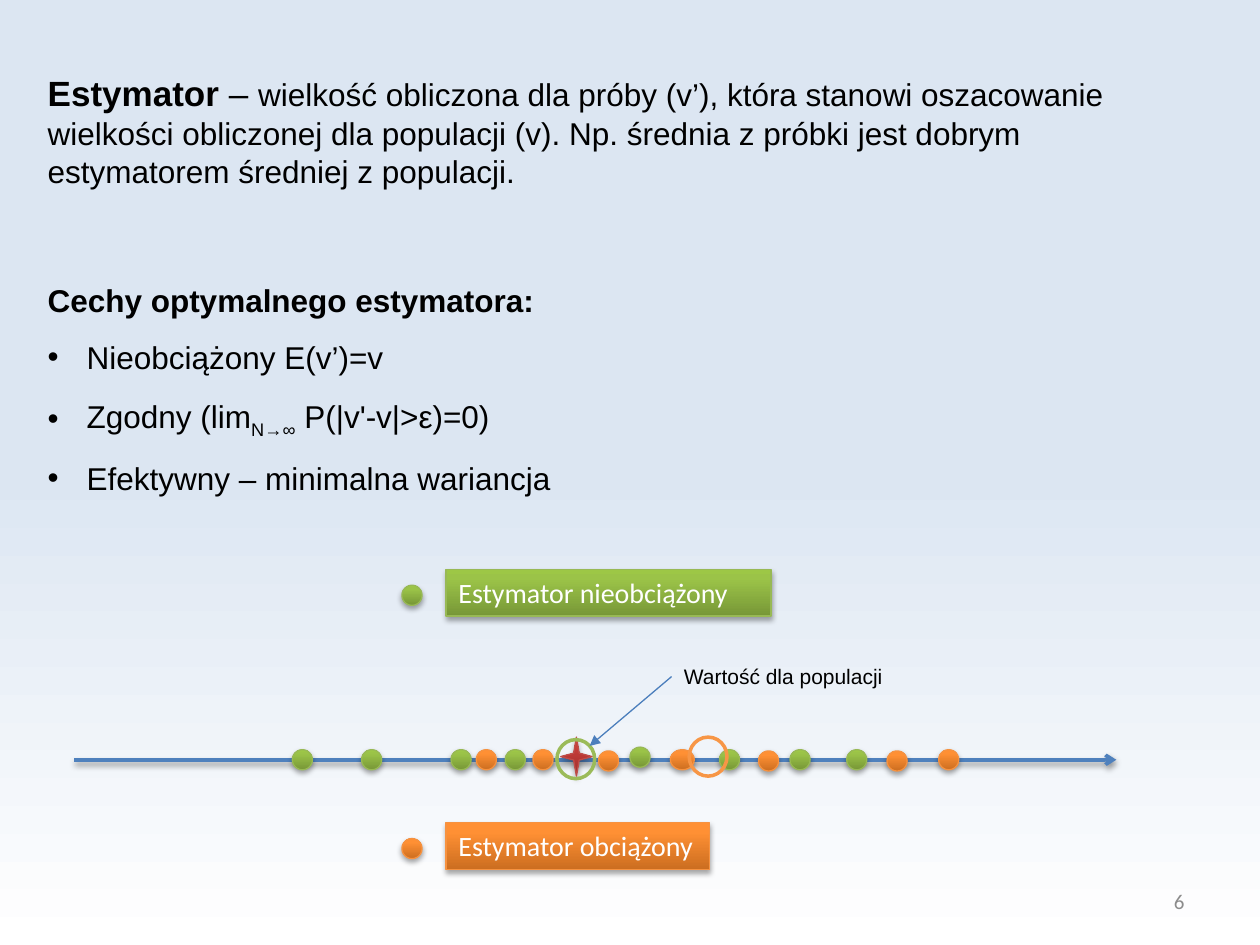
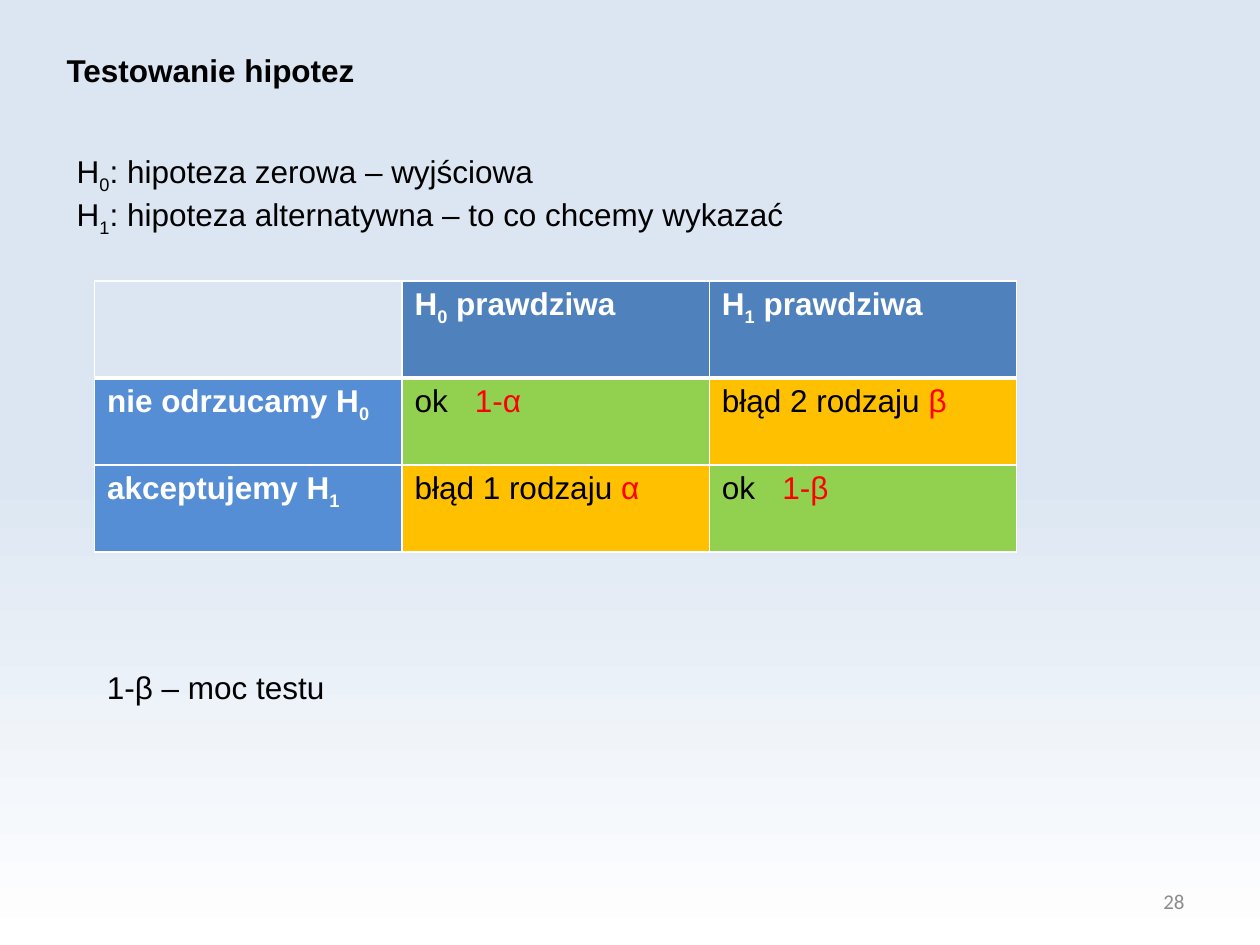
from copy import deepcopy
from lxml.etree import SubElement as Sub
from pptx import Presentation
from pptx.dml.color import RGBColor as Rgb
from pptx.enum.shapes import MSO_CONNECTOR as Link, MSO_SHAPE as Form
from pptx.enum.text import MSO_ANCHOR as Anchor, MSO_AUTO_SIZE as Fit, PP_ALIGN as Align
from pptx.oxml.ns import qn
from pptx.util import Inches, Pt

UNIT = Inches(0.1)
COLS, ROWS = 100, 75
BLACK = Rgb(0x00, 0x00, 0x00)
WHITE = Rgb(0xFF, 0xFF, 0xFF)
RED = Rgb(0xFF, 0x00, 0x00)
GREY = Rgb(0x8C, 0x8C, 0x8C)
SKY = Rgb(0xDC, 0xE6, 0xF2)
BLUE = Rgb(0x4F, 0x81, 0xBD)
STEEL = Rgb(0x4B, 0x7E, 0xBC)
AZURE = Rgb(0x55, 0x8E, 0xD5)
LIME = Rgb(0x92, 0xD0, 0x50)
AMBER = Rgb(0xFF, 0xC0, 0x00)
LEAF = Rgb(0x9B, 0xBB, 0x59)
PEACH = Rgb(0xF7, 0x96, 0x46)

GREEN = {"edge": Rgb(0x98, 0xB9, 0x55),
         "stops": [(0, Rgb(0x77, 0x97, 0x37)), (0.8, Rgb(0x9B, 0xC3, 0x48)), (1, Rgb(0x9D, 0xC7, 0x46))]}
ORANGE = {"edge": Rgb(0xF6, 0x92, 0x40),
          "stops": [(0, Rgb(0xCC, 0x6E, 0x20)), (0.8, Rgb(0xFF, 0x90, 0x34)), (1, Rgb(0xFF, 0x91, 0x36))]}
RUBY = {"edge": Rgb(0xBF, 0x4C, 0x48),
        "stops": [(0, Rgb(0x9C, 0x2F, 0x2D)), (0.8, Rgb(0xCB, 0x3E, 0x3A)), (1, Rgb(0xCE, 0x3B, 0x37))]}

BODY = {"name": "Arial", "size": Pt(18), "bold": False}
NOTE = {"name": "Arial", "size": Pt(12)}
PAGE = {"name": "Calibri", "size": Pt(12)}
TAG = {"name": "Calibri", "size": Pt(16)}
HEAD = BODY | {"bold": True}
TERM = HEAD | {"size": Pt(20)}
DASH = TERM | {"bold": False}

DOT = 1.6
AXIS = 60.3
LEVEL = 59.5


def grid(*cells):
    return [round(cell * UNIT) for cell in cells]


def apply(item, style):
    for key, value in style.items():
        setattr(item, key, value)


def add(root, tag, **attrs):
    return Sub(root, qn(tag), {key: str(value) for key, value in attrs.items()})


def blend(fill, root, stops, angle):
    fill.gradient()
    fill.gradient_angle = angle
    marks = next(root.iter(qn("a:gsLst")))
    marks.append(deepcopy(marks[0]))
    for mark, (place, tint) in zip(fill.gradient_stops, stops):
        mark.color.rgb = tint
        mark.position = place


def shade(item, alpha, gap):
    effect = add(item.element.spPr, "a:effectLst")
    if alpha:
        cast = add(effect, "a:outerShdw", blurRad=Pt(3.1), dist=Pt(gap), dir=5400000, rotWithShape=0)
        add(add(cast, "a:srgbClr", val="000000"), "a:alpha", val=alpha * 1000)


def write(par, text, style=BODY, ink=BLACK):
    for turn, part in enumerate(text.split("~")):
        if part:
            run = par.add_run()
            run.text = part
            apply(run.font, style)
            run.font.color.rgb = ink
            if turn % 2:
                run.font._element.set("baseline", "-25000")


def label(slide, area, texts, style=BODY, ink=BLACK, **frame):
    text = slide.shapes.add_textbox(*grid(*area)).text_frame
    apply(text, {"word_wrap": False, "auto_size": Fit.SHAPE_TO_FIT_TEXT} | frame)
    for turn, line in enumerate(texts):
        write(text.add_paragraph() if turn else text.paragraphs[0], line, style, ink)
    return text


def bullet(text, line):
    par = text.add_paragraph()
    par.line_spacing = 1.5
    props = par._p.get_or_add_pPr()
    props.set("marL", str(Inches(0.31)))
    props.set("indent", str(-Inches(0.31)))
    add(props, "a:buFont", typeface="Arial")
    add(props, "a:buChar", char="•")
    write(par, line)


def number(slide, value):
    text = label(slide, (71.7, 69.5, 23.3, 4), [value], PAGE, GREY, word_wrap=True,
                 auto_size=Fit.NONE, vertical_anchor=Anchor.MIDDLE)
    text.paragraphs[0].alignment = Align.RIGHT


def solid(slide, form, area, look):
    shape = slide.shapes.add_shape(form, *grid(*area))
    blend(shape.fill, shape.element, look["stops"], 90)
    shape.line.color.rgb = look["edge"]
    shape.line.width = Pt(0.75)
    shade(shape, 35, 1.8)
    return shape


def dot(slide, look, left, top=LEVEL, width=DOT):
    solid(slide, Form.OVAL, (left, top, width, DOT), look)


def ring(slide, left, top, tint):
    shape = slide.shapes.add_shape(Form.OVAL, *grid(left, top, 3, 3.1))
    shape.fill.background()
    shape.line.color.rgb = tint
    shape.line.width = Pt(2)
    shade(shape, 0, 0)


def legend(slide, look, top, width, text):
    dot(slide, look, 31.9, top + 1.25)
    shape = solid(slide, Form.RECTANGLE, (35.4, top, width, 3.7), look)
    apply(shape.text_frame, {"word_wrap": False, "auto_size": Fit.SHAPE_TO_FIT_TEXT,
                             "vertical_anchor": Anchor.TOP})
    par = shape.text_frame.paragraphs[0]
    par.alignment = Align.LEFT
    write(par, text, TAG, WHITE)


def arrow(slide, ends, tint, width, tip, alpha=0):
    line = slide.shapes.add_connector(Link.STRAIGHT, *grid(*ends))
    line.line.color.rgb = tint
    line.line.width = Pt(width)
    add(line.line._get_or_add_ln(), "a:tailEnd", type=tip)
    shade(line, alpha, 1.6)


def border(cell, sides):
    props = cell._tc.get_or_add_tcPr()
    for side, width in sides.items():
        line = add(props, "a:ln" + side, w=Pt(width))
        add(add(line, "a:solidFill"), "a:srgbClr", val=str(WHITE))


def matrix(slide, area, rows, highs):
    frame = slide.shapes.add_table(len(rows), len(rows[0]), *grid(*area))
    table = frame.table
    apply(table, {"first_row": False, "horz_banding": False})
    for row, high in zip(table.rows, grid(*highs)):
        row.height = high
    for down, row in enumerate(rows):
        for across, (tint, runs) in enumerate(row):
            cell = table.cell(down, across)
            border(cell, {"L": 1, "R": 1, "T": 3 if down == 1 else 1, "B": 1 if down else 3})
            if tint is None:
                cell.fill.background()
            else:
                cell.fill.solid()
                cell.fill.fore_color.rgb = tint
            par = cell.text_frame.paragraphs[0]
            if any("\t" in run[0] for run in runs):
                tabs = add(par._p.get_or_add_pPr(), "a:tabLst")
                add(tabs, "a:tab", pos=Inches(0.48), algn="l")
            for run in runs:
                write(par, *run)


def estimator(slide):
    number(slide, "6")
    text = label(slide, (2.8, 5.2, 92.2, 10.8), ["Estymator"], TERM, word_wrap=True)
    par = text.paragraphs[0]
    write(par, " – ", DASH)
    write(par, "wielkość obliczona dla próby (v’), która stanowi oszacowanie wielkości obliczonej "
               "dla populacji (v). Np. średnia z próbki jest dobrym estymatorem średniej z populacji.")
    text = label(slide, (2.8, 21.8, 42.3, 17.7), ["Cechy optymalnego estymatora:"], HEAD)
    for line in ("Nieobciążony E(v’)=v", "Zgodny (lim~N→∞~ P(|v'-v|>ε)=0)",
                 "Efektywny – minimalna wariancja"):
        bullet(text, line)

    arrow(slide, (5.9, AXIS, 88.6, AXIS), BLUE, 2, "arrow", 38)
    solid(slide, Form.STAR_4_POINT, (44.5, 58.5, 2.5, 3.1), RUBY)
    for left in (23.2, 28.7, 35.8, 40.1, 57.1, 62.7, 67.2):
        dot(slide, GREEN, left)
    dot(slide, GREEN, 50, 59.3)
    for left in (37.8, 42.3, 74.5):
        dot(slide, ORANGE, left)
    for left in (47.5, 60.2, 70.4):
        dot(slide, ORANGE, left, 59.6)
    dot(slide, ORANGE, 53.2, width=1.9)
    ring(slide, 44.2, 58.7, LEAF)
    ring(slide, 54.7, 58.5, PEACH)
    legend(slide, GREEN, 45.2, 25.8, "Estymator nieobciążony")
    legend(slide, ORANGE, 65.3, 20.9, "Estymator obciążony")
    label(slide, (53.3, 52.2, 17.9, 3), ["Wartość dla populacji"], NOTE)
    arrow(slide, (53.3, 53.7, 46.8, 59.2), STEEL, 0.75, "triangle")


def testing(slide):
    number(slide, "28")
    label(slide, (4.3, 3.6, 25.1, 4), ["Testowanie hipotez"], HEAD)
    label(slide, (5.1, 11.6, 58.8, 7.1), ["H~0~: hipoteza zerowa – wyjściowa",
                                          "H~1~: hipoteza alternatywna – to co chcemy wykazać"])

    def title(tint, text):
        return tint, [(text, HEAD, WHITE)]

    def result(tint, text, sign):
        return tint, [(text,), (sign, BODY, RED)]

    rows = [
        [(None, []), title(BLUE, "H~0~ prawdziwa"), title(BLUE, "H~1~ prawdziwa")],
        [title(AZURE, "nie odrzucamy H~0~"), result(LIME, "ok\t", "1-α"),
         result(AMBER, "błąd 2 rodzaju ", "β")],
        [title(AZURE, "akceptujemy H~1~"), result(AMBER, "błąd 1 rodzaju ", "α"),
         result(LIME, "ok\t", "1-β")],
    ]
    matrix(slide, (7.5, 22.3, 73.2, 21.5), rows, (7.7, 6.9, 6.9))
    label(slide, (7.5, 52.5, 19.5, 4), ["1-β – moc testu"])


def main():
    deck = Presentation()
    deck.slide_width, deck.slide_height = grid(COLS, ROWS)
    master = deck.slide_master
    blend(master.background.fill, master.element, [(0, SKY), (0.5, SKY), (1, WHITE)], 270)
    for build in (estimator, testing):
        build(deck.slides.add_slide(deck.slide_layouts[6]))
    deck.save("out.pptx")


if __name__ == "__main__":
    main()
